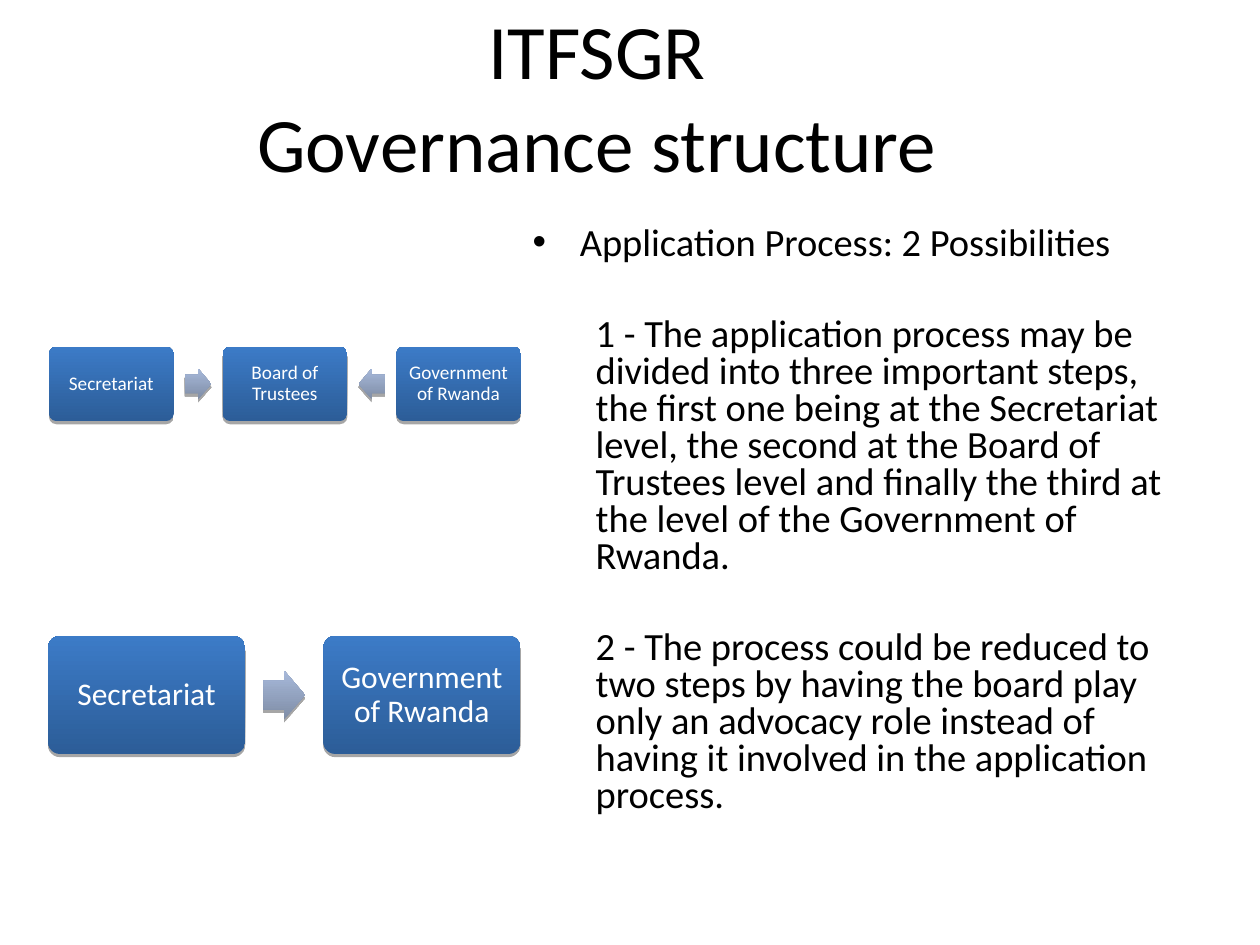
from lxml.etree import SubElement
from pptx import Presentation
from pptx.dml.color import RGBColor
from pptx.enum.shapes import MSO_SHAPE
from pptx.enum.text import MSO_ANCHOR, PP_ALIGN
from pptx.oxml import parse_xml
from pptx.oxml.ns import qn
from pptx.util import Cm, Pt

DRAWING_NS = "http://schemas.openxmlformats.org/drawingml/2006/main"
SHADOW = (f'<a:effectLst xmlns:a="{DRAWING_NS}"><a:outerShdw dist="22860" dir="5400000" '
          'algn="ctr" rotWithShape="0"><a:srgbClr val="000000"><a:alpha val="35000"/>'
          '</a:srgbClr></a:outerShdw></a:effectLst>')


def write(paragraph, text, *, size, color="000000", align=PP_ALIGN.LEFT,
          line=1.0, before=0, after=0, margin=0, indent=0, bullet=None):
    """Fill a paragraph; margin and indent are in centimetres, the rest in points."""
    paragraph.text = text
    paragraph.alignment = align
    paragraph.line_spacing = line
    paragraph.space_before, paragraph.space_after = Pt(before), Pt(after)
    for run in paragraph.runs:
        run.font.name, run.font.size = "Calibri", Pt(size)
        run.font.color.rgb = RGBColor.from_string(color)
    properties = paragraph._p.get_or_add_pPr()
    properties.set("marL", str(Cm(margin)))
    properties.set("indent", str(Cm(indent)))
    if bullet:
        SubElement(properties, qn("a:buFont"), typeface="Arial")
        SubElement(properties, qn("a:buChar"), char=bullet)


def add_block(kind, left, top, width, height, bottom_color, top_color):
    """Add a shape with a vertical gradient and a drop shadow; lengths in centimetres."""
    block = slide.shapes.add_shape(kind, Cm(left), Cm(top), Cm(width), Cm(height))
    block.fill.gradient()
    block.fill.gradient_angle = 90
    for stop, color, position in zip(block.fill.gradient_stops, (bottom_color, top_color), (0, 1)):
        stop.color.rgb = RGBColor.from_string(color)
        stop.position = position
    block.line.fill.background()
    block.shadow.inherit = False
    properties = block._element.spPr
    properties.replace(properties.find(qn("a:effectLst")), parse_xml(SHADOW))
    return block


presentation = Presentation()
presentation.slide_width, presentation.slide_height = Cm(25.4), Cm(19.05)
slide = presentation.slides.add_slide(presentation.slide_layouts[6])

# Application process
process = slide.shapes.add_textbox(Cm(10.49), Cm(4.45), Cm(13.64), Cm(12.57)).text_frame
process.word_wrap = True
write(process.paragraphs[0], "Application Process: 2 Possibilities", size=22,
      line=0.8, before=5, margin=0.95, indent=-0.95, bullet="•")
possibilities = [
    "1 - The application process may be divided into three important steps, the first one "
    "being at the Secretariat level, the second at the Board of Trustees level and finally "
    "the third at the level of the Government of Rwanda.",
    "2 - The process could be reduced to two steps by having the board play only an advocacy "
    "role instead of having it involved in the application process.",
]
for possibility in possibilities:
    write(process.add_paragraph(), possibility, size=22, line=0.8, before=31, margin=1.27)

# Flows: steps, arrows between them, left, top, step width, step height, pitch,
# arrow width, arrow height, text size, inset, space after
RIGHT, LEFT = MSO_SHAPE.RIGHT_ARROW, MSO_SHAPE.LEFT_ARROW
flows = [
    (["Secretariat", "Board of Trustees", "Government of Rwanda"], [RIGHT, LEFT],
     0.99, 6.99, 2.51, 1.5, 3.5, 0.53, 0.62, 11, 0.15, 5),
    (["Secretariat", "Government of Rwanda"], [RIGHT],
     0.97, 12.82, 3.97, 2.38, 5.55, 0.84, 0.98, 18, 0.25, 8),
]
for (steps, arrows, left, top, width, height, pitch,
     arrow_width, arrow_height, size, inset, after) in flows:
    for index, step in enumerate(steps):
        box = add_block(MSO_SHAPE.ROUNDED_RECTANGLE, left + index * pitch, top,
                        width, height, "2C5D98", "3C7BC7")
        box.adjustments[0] = 0.1
        label = box.text_frame
        label.word_wrap = True
        label.vertical_anchor = MSO_ANCHOR.MIDDLE
        label.margin_left = label.margin_right = Cm(inset)
        label.margin_top = label.margin_bottom = Cm(inset)
        write(label.paragraphs[0], step, size=size, color="FFFFFF",
              align=PP_ALIGN.CENTER, line=0.9, after=after)
    for index, direction in enumerate(arrows):
        gap_middle = left + index * pitch + (width + pitch) / 2
        arrow = add_block(direction, gap_middle - arrow_width / 2,
                          top + (height - arrow_height) / 2,
                          arrow_width, arrow_height, "7F8DA6", "A7B9DA")
        arrow.adjustments[0] = 0.6
        arrow.adjustments[1] = 0.5

# Title
title = slide.shapes.add_textbox(Cm(3.1), Cm(0.69), Cm(17.88), Cm(2.46)).text_frame
title.word_wrap = True
title.vertical_anchor = MSO_ANCHOR.MIDDLE
write(title.paragraphs[0], "ITFSGR\nGovernance structure", size=44, align=PP_ALIGN.CENTER)

presentation.save("out.pptx")
